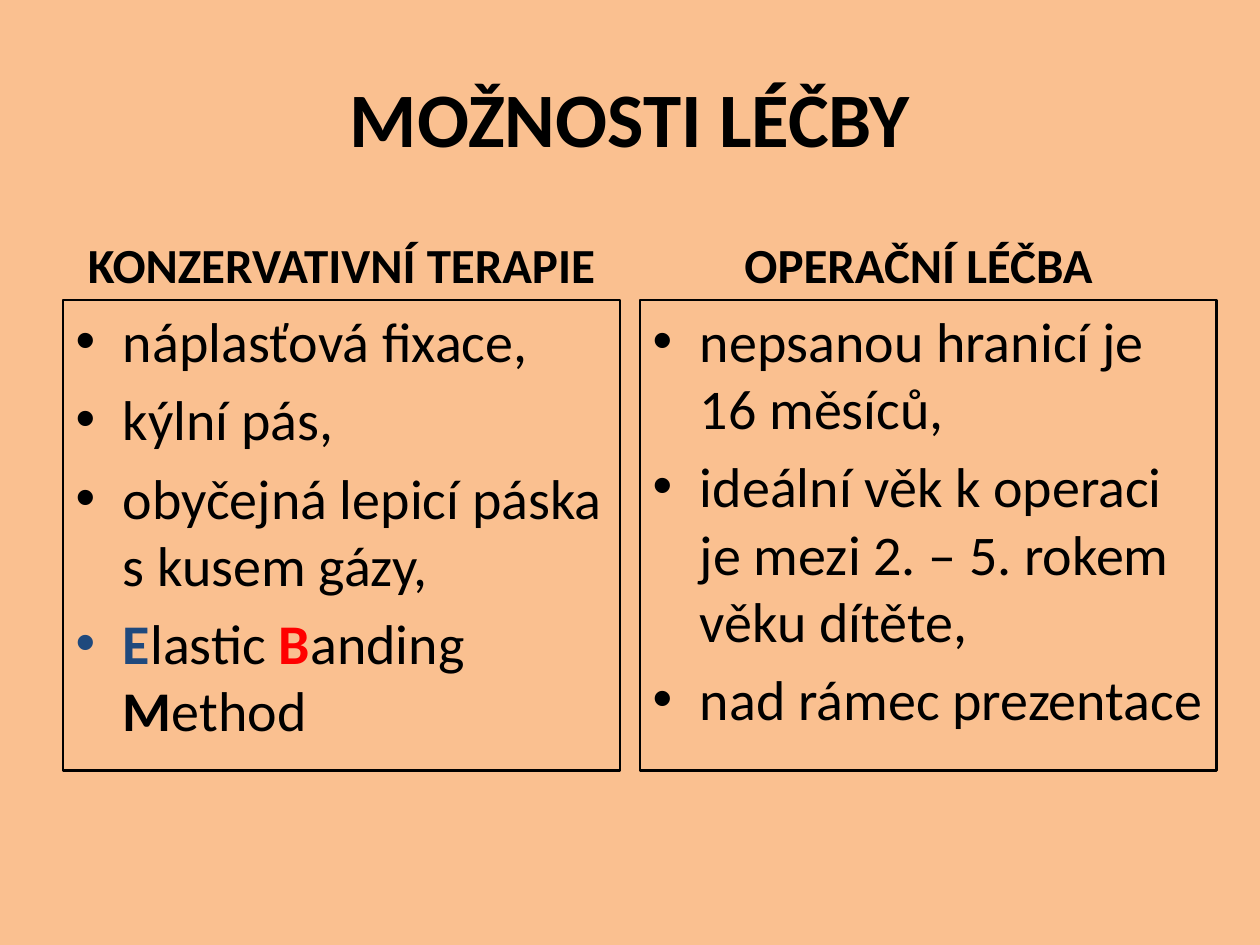
from pptx import Presentation
from pptx.dml.color import RGBColor
from pptx.enum.text import MSO_ANCHOR, MSO_AUTO_SIZE, PP_ALIGN
from pptx.util import Pt

COLORS = {
    "background": "FAC090",
    "text": "000000",
    "blue": "1F497D",
    "red": "FF0000",
}
COMPARISON_LAYOUT = 4
MARGIN = 36
COLUMN_WIDTH = 318.25
HEADING_TOP, HEADING_HEIGHT = 121, 50.4
LIST_TOP, LIST_HEIGHT = HEADING_TOP + HEADING_HEIGHT, 268.75


def rgb(name):
    return RGBColor.from_string(COLORS[name])


class ComparisonSlide:
    """Holds the text style and the slide whose placeholders are filled."""

    font_name = "Calibri"

    def __init__(self, presentation):
        layout = presentation.slide_layouts[COMPARISON_LAYOUT]
        self.slide = presentation.slides.add_slide(layout)
        self.slide.background.fill.solid()
        self.slide.background.fill.fore_color.rgb = rgb("background")

    def place(self, index, left, top, width, height, anchor):
        """Move a placeholder and return it with its text set to wrap."""
        placeholder = self.slide.placeholders[index]
        placeholder.left, placeholder.top = Pt(left), Pt(top)
        placeholder.width, placeholder.height = Pt(width), Pt(height)
        frame = placeholder.text_frame
        frame.word_wrap = True
        frame.auto_size = MSO_AUTO_SIZE.NONE
        frame.vertical_anchor = anchor
        return placeholder

    def style(self, paragraph, size, bold=False):
        font = paragraph.font
        font.name, font.size, font.bold = self.font_name, Pt(size), bold
        font.color.rgb = rgb("text")

    def heading(self, index, text, box, size, anchor):
        frame = self.place(index, *box, anchor).text_frame
        frame.text = text
        paragraph = frame.paragraphs[0]
        paragraph.alignment = PP_ALIGN.CENTER
        self.style(paragraph, size, bold=True)

    def bullet_list(self, index, items, box):
        """Fill a framed list; an item is a text or (text, accent) pairs."""
        placeholder = self.place(index, *box, MSO_ANCHOR.TOP)
        placeholder.line.color.rgb = rgb("text")
        placeholder.line.width = Pt(1.5)
        frame = placeholder.text_frame
        for number, item in enumerate(items):
            paragraph = frame.add_paragraph() if number else frame.paragraphs[0]
            self.style(paragraph, 32)
            parts = [(item, None)] if isinstance(item, str) else item
            for text, accent in parts:
                run = paragraph.add_run()
                run.text = text
                run.font.name, run.font.size = self.font_name, Pt(32)
                run.font.color.rgb = rgb(accent or "text")
                run.font.bold = accent is not None


def main():
    presentation = Presentation()
    presentation.slide_width, presentation.slide_height = Pt(720), Pt(540)
    comparison = ComparisonSlide(presentation)
    comparison.heading(
        0, "MOŽNOSTI LÉČBY", (MARGIN, 21.6, 720 - 2 * MARGIN, 90), 44, MSO_ANCHOR.MIDDLE
    )

    banding_method = [
        ("E", "blue"), ("lastic ", None),
        ("B", "red"), ("anding ", None),
        ("M", "text"), ("ethod", None),
    ]
    conservative = [
        "náplasťová fixace,",
        "kýlní pás,",
        "obyčejná lepicí páska s kusem gázy,",
        banding_method,
    ]
    surgical = [
        "nepsanou hranicí je 16 měsíců,",
        "ideální věk k operaci je mezi 2. – 5. rokem věku dítěte,",
        "nad rámec prezentace",
    ]
    right_column = 720 - MARGIN - COLUMN_WIDTH
    columns = [
        ("KONZERVATIVNÍ TERAPIE", conservative, MARGIN, COLUMN_WIDTH),
        ("OPERAČNÍ LÉČBA", surgical, right_column, COLUMN_WIDTH + 11),
    ]
    for number, (heading, items, left, list_width) in enumerate(columns):
        heading_index = 1 + 2 * number
        heading_box = (left, HEADING_TOP, COLUMN_WIDTH, HEADING_HEIGHT)
        comparison.heading(heading_index, heading, heading_box, 28, MSO_ANCHOR.BOTTOM)
        list_box = (left, LIST_TOP, list_width, LIST_HEIGHT)
        comparison.bullet_list(heading_index + 1, items, list_box)

    presentation.save("out.pptx")


if __name__ == "__main__":
    main()
